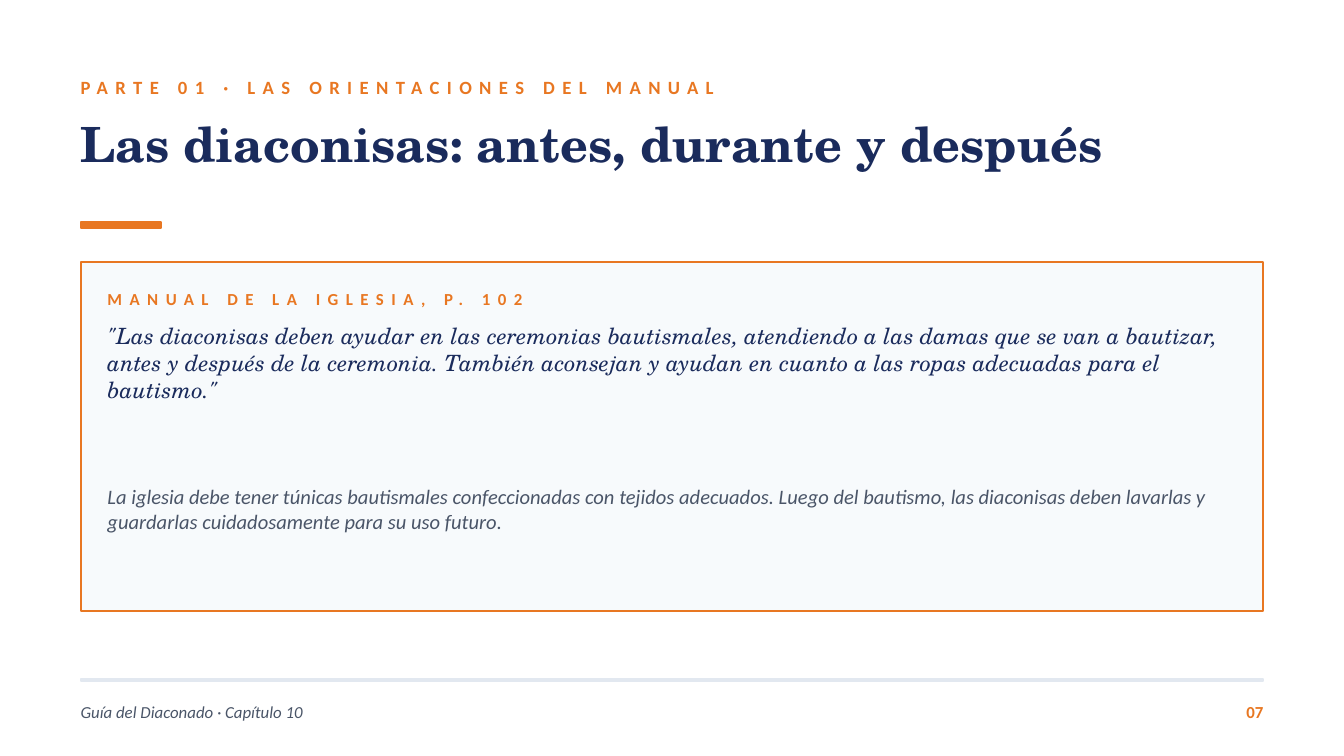
from pptx import Presentation
from pptx.dml.color import RGBColor
from pptx.enum.shapes import MSO_SHAPE as Shape
from pptx.enum.text import MSO_ANCHOR as Anchor, PP_ALIGN as Align
from pptx.util import Inches, Pt

COLORS = {
    "orange": "E87722",
    "navy": "1A2B5C",
    "gray": "4A5568",
    "card": "F7FAFC",
    "rule": "E2E8F0",
}
SERIF, SANS = "TeX Gyre Schola", "Calibri"

# Grid of 0.05 inch cells
CELL = 0.05
LEFT, WIDTH = 12, 176
PAD = 4
INNER_LEFT, INNER_WIDTH = LEFT + PAD, WIDTH - 2 * PAD
FOOTER_ROW, NUMBER_WIDTH = 103, 10


def cells(*counts):
    return [Inches(n * CELL) for n in counts]


def color(name):
    return RGBColor.from_string(COLORS[name])


def add_text(slide, box, text, size, tint, font=SANS, bold=False, italic=False,
             spacing=0, anchor=Anchor.TOP, align=Align.LEFT):
    """Add one paragraph; box is in grid cells, spacing between letters in points."""
    tf = slide.shapes.add_textbox(*cells(*box)).text_frame
    tf.word_wrap = True
    tf.vertical_anchor = anchor
    tf.margin_left = tf.margin_top = tf.margin_right = tf.margin_bottom = 0
    p = tf.paragraphs[0]
    p.text = text
    p.alignment = align
    r = p.runs[0]
    r.font.name = font
    r.font.size = Pt(size)
    r.font.bold = bold
    r.font.italic = italic
    r.font.color.rgb = color(tint)
    if spacing:
        r.font._element.set("spc", str(spacing * 100))


def add_label(slide, box, text, size):
    add_text(slide, box, text, size, "orange", bold=True, spacing=4,
             anchor=Anchor.MIDDLE)


def add_rect(slide, box, fill, line):
    sp = slide.shapes.add_shape(Shape.RECTANGLE, *cells(*box))
    sp.shadow.inherit = False
    sp.fill.solid()
    sp.fill.fore_color.rgb = color(fill)
    sp.line.color.rgb = color(line)
    sp.line.width = Pt(1)


def add_header(slide):
    add_label(slide, (LEFT, 10, 140, 6), "PARTE 01 · LAS ORIENTACIONES DEL MANUAL", 10)
    add_text(slide, (LEFT, 17, 180, 14), "Las diaconisas: antes, durante y después",
             26, "navy", SERIF, bold=True)
    add_rect(slide, (LEFT, 33, 12, 1), "orange", "orange")


def add_quote_card(slide):
    add_rect(slide, (LEFT, 39, WIDTH, 52), "card", "orange")
    add_label(slide, (INNER_LEFT, 42, 120, 5), "MANUAL DE LA IGLESIA, P. 102", 9)
    add_text(slide, (INNER_LEFT, 48, INNER_WIDTH, 23),
             '"Las diaconisas deben ayudar en las ceremonias bautismales, atendiendo a '
             'las damas que se van a bautizar, antes y después de la ceremonia. También '
             'aconsejan y ayudan en cuanto a las ropas adecuadas para el bautismo."',
             12, "navy", SERIF, italic=True)
    add_text(slide, (INNER_LEFT, 72, INNER_WIDTH, 17),
             "La iglesia debe tener túnicas bautismales confeccionadas con tejidos "
             "adecuados. Luego del bautismo, las diaconisas deben lavarlas y guardarlas "
             "cuidadosamente para su uso futuro.",
             11, "gray", italic=True)


def add_footer(slide):
    add_rect(slide, (LEFT, FOOTER_ROW - 2, WIDTH, 0.4), "rule", "rule")
    add_text(slide, (LEFT, FOOTER_ROW, 120, 6), "Guía del Diaconado · Capítulo 10",
             9, "gray", italic=True, anchor=Anchor.MIDDLE)
    add_text(slide, (LEFT + WIDTH - NUMBER_WIDTH, FOOTER_ROW, NUMBER_WIDTH, 6), "07",
             9, "orange", bold=True, anchor=Anchor.MIDDLE, align=Align.RIGHT)


def main():
    prs = Presentation()
    prs.slide_width = Inches(10)
    prs.slide_height = prs.slide_width * 9 // 16
    slide = prs.slides.add_slide(prs.slide_layouts[6])
    add_header(slide)
    add_quote_card(slide)
    add_footer(slide)
    prs.save("out.pptx")


if __name__ == "__main__":
    main()
